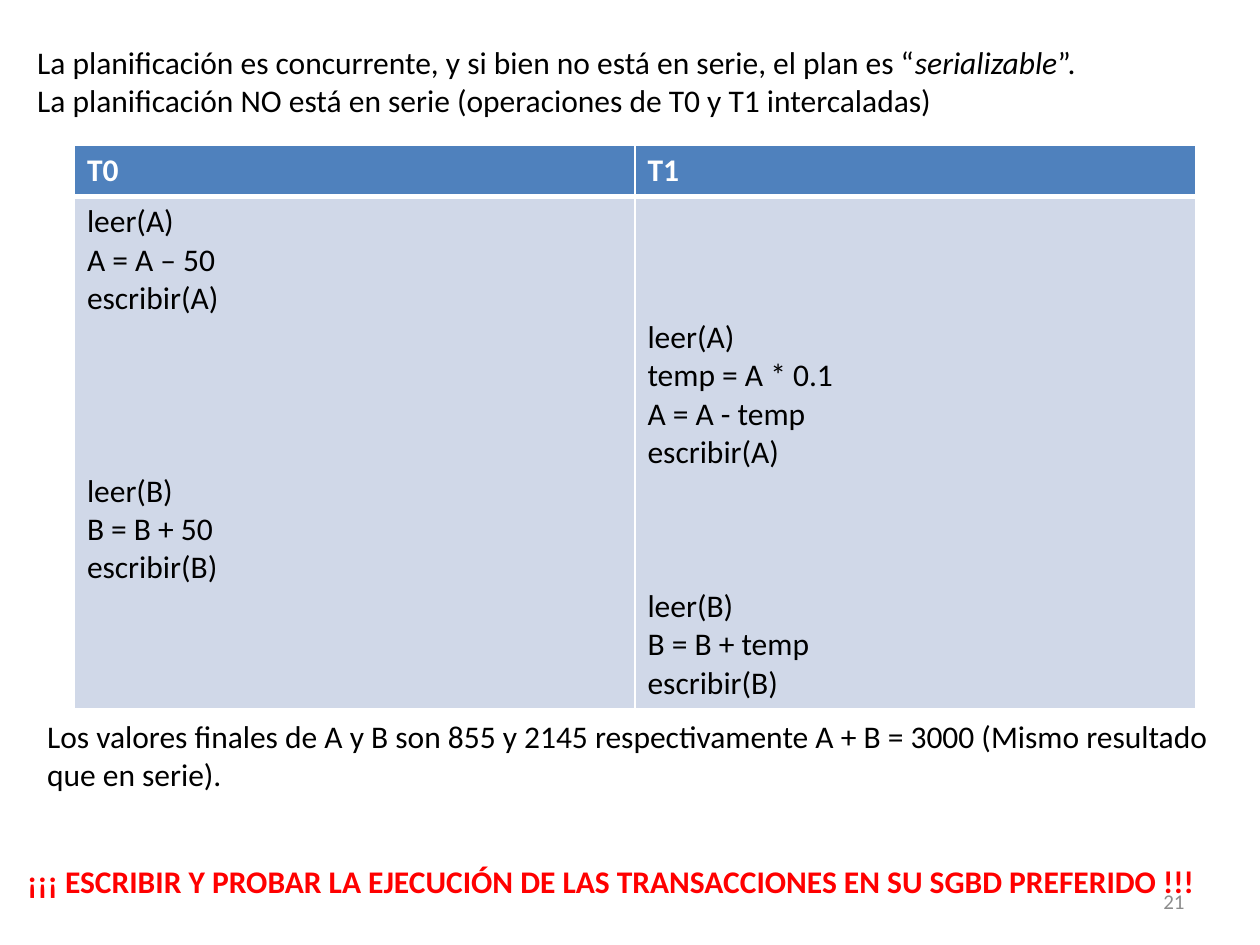
import pptx
import pptx.dml.color
import pptx.enum.text
import pptx.oxml
import pptx.oxml.ns
import pptx.util

Cm = pptx.util.Cm
Pt = pptx.util.Pt
RGBColor = pptx.dml.color.RGBColor
ANCHOR = pptx.enum.text.MSO_ANCHOR
ALIGN = pptx.enum.text.PP_ALIGN

BLACK = RGBColor(0x00, 0x00, 0x00)
WHITE = RGBColor(0xFF, 0xFF, 0xFF)
RED = RGBColor(0xFF, 0x00, 0x00)
GRAY = RGBColor(0x8C, 0x8C, 0x8C)
BLUE = RGBColor(0x4F, 0x81, 0xBD)
PALE_BLUE = RGBColor(0xD0, 0xD8, 0xE8)

LINE_POINTS = 21.97
CELL_MARGIN = Cm(0.13)
SCHEDULE_LINES = 13

SCHEDULE = {
    "T0": {
        0: ["leer(A)", "A = A – 50", "escribir(A)"],
        7: ["leer(B)", "B = B + 50", "escribir(B)"],
    },
    "T1": {
        3: ["leer(A)", "temp = A * 0.1", "A = A - temp", "escribir(A)"],
        10: ["leer(B)", "B = B + temp", "escribir(B)"],
    },
}


def add_span(para, text, color, **formats):
    span = para.add_run()
    span.text = text
    values = {"name": "Calibri", "size": Pt(18), "bold": False, "italic": False}
    for name, value in (values | formats).items():
        setattr(span.font, name, value)
    span.font.color.rgb = color


def add_note(page, box, lines, color=BLACK, align=ALIGN.LEFT, anchor=ANCHOR.TOP, **formats):
    frame = page.shapes.add_textbox(*box).text_frame
    for name, value in {"word_wrap": True, "vertical_anchor": anchor}.items():
        setattr(frame, name, value)
    for index, spans in enumerate(lines):
        para = frame.add_paragraph() if index else frame.paragraphs[0]
        para.alignment = align
        for text, extra in spans:
            add_span(para, text, color, **(formats | extra))


def style_cell(cell, fill, bottom_width):
    cell.fill.solid()
    cell.fill.fore_color.rgb = fill
    properties = cell._tc.get_or_add_tcPr()
    widths = {"lnL": 1, "lnR": 1, "lnT": 1, "lnB": bottom_width}
    for index, (side, width) in enumerate(widths.items()):
        border = pptx.oxml.parse_xml(
            f'<a:{side} {pptx.oxml.ns.nsdecls("a")} w="{Pt(width)}">'
            f'<a:solidFill><a:srgbClr val="{WHITE}"/></a:solidFill></a:{side}>'
        )
        properties.insert(index, border)


def fill_steps(cell, blocks):
    first_line = min(blocks)
    cell.margin_top = CELL_MARGIN + Pt(first_line * LINE_POINTS)
    next_line = first_line
    para = cell.text_frame.paragraphs[0]
    for start, steps in blocks.items():
        for line, step in enumerate(steps, start):
            if line > first_line:
                para = cell.text_frame.add_paragraph()
            if line > next_line:
                para.space_before = Pt((line - next_line) * LINE_POINTS)
            add_span(para, step, BLACK)
            next_line = line + 1


def add_schedule(page, box):
    left, top, width, height = box
    table = page.shapes.add_table(2, len(SCHEDULE), left, top, width, height).table
    body_height = Pt(SCHEDULE_LINES * LINE_POINTS) + 2 * CELL_MARGIN
    table.rows[0].height = height - body_height
    table.rows[1].height = body_height
    for column, (transaction, blocks) in enumerate(SCHEDULE.items()):
        table.columns[column].width = width // len(SCHEDULE)
        header, body = table.cell(0, column), table.cell(1, column)
        style_cell(header, BLUE, 3)
        style_cell(body, PALE_BLUE, 1)
        add_span(header.text_frame.paragraphs[0], transaction, WHITE, bold=True)
        fill_steps(body, blocks)


def main():
    deck = pptx.Presentation()
    deck.slide_width, deck.slide_height = Cm(25.4), Cm(19.05)
    page = deck.slides.add_slide(deck.slide_layouts[6])

    add_schedule(page, (Cm(1.5), Cm(2.93), Cm(22.6), Cm(11.35)))
    add_note(page, (Cm(0.5), Cm(0.74), Cm(24.6), Cm(1.8)), [
        [
            ("La planificación es concurrente, y si bien no está en serie, el plan es “", {}),
            ("serializable", {"italic": True}),
            ("”.", {}),
        ],
        [("La planificación NO está en serie (operaciones de T0 y T1 intercaladas)", {})],
    ])
    add_note(page, (Cm(0.7), Cm(14.33), Cm(24.2), Cm(1.8)), [
        [("Los valores finales de A y B son 855 y 2145 respectivamente "
          "A + B = 3000 (Mismo resultado que en serie).", {})],
    ])
    add_note(page, (Cm(0.3), Cm(17.25), Cm(24.2), Cm(1.02)), [
        [("¡¡¡ ESCRIBIR Y PROBAR LA EJECUCIÓN DE LAS TRANSACCIONES "
          "EN SU SGBD PREFERIDO !!!", {})],
    ], color=RED, bold=True)
    add_note(page, (Cm(18.2), Cm(17.66), Cm(5.93), Cm(1.01)), [[("21", {})]],
             color=GRAY, align=ALIGN.RIGHT, anchor=ANCHOR.MIDDLE, size=Pt(12))

    deck.save("out.pptx")


if __name__ == "__main__":
    main()
